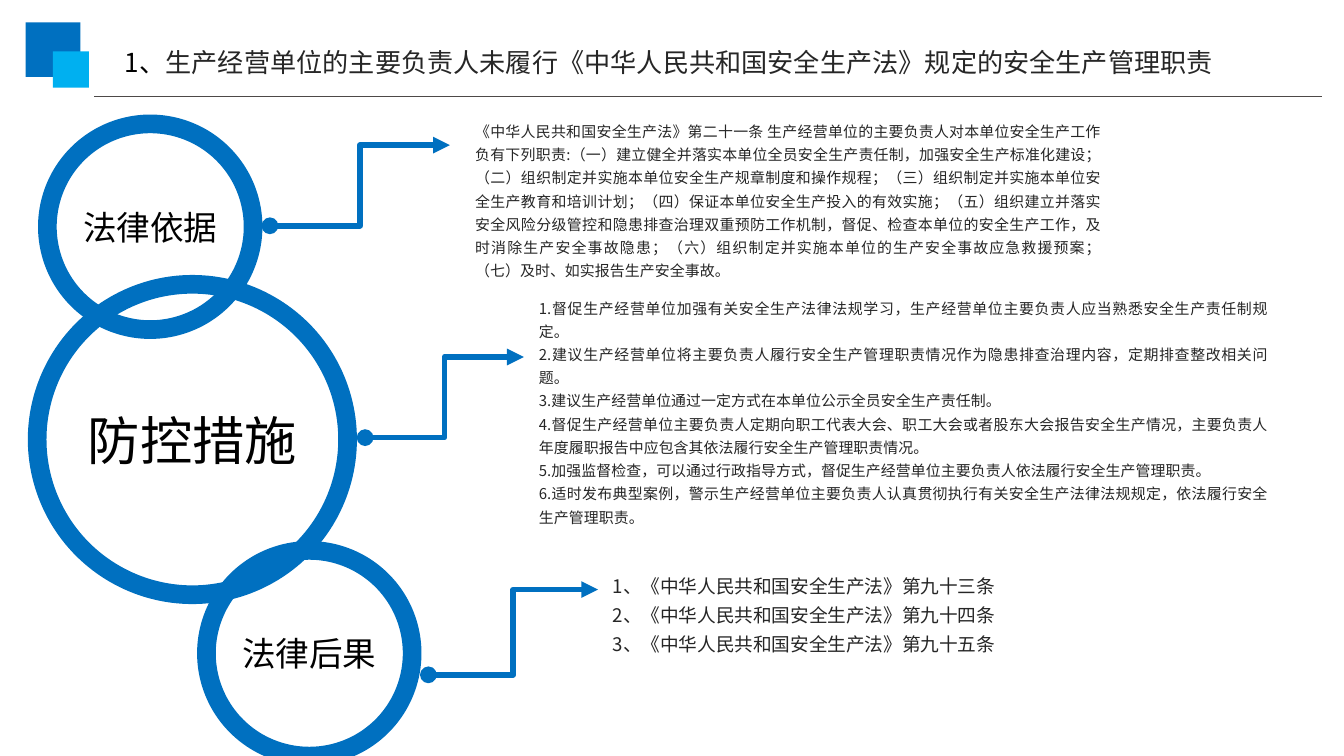
"""Build a slide on the duties of the person in charge of work safety."""
from lxml.etree import SubElement
from pptx import Presentation
from pptx.dml.color import RGBColor
from pptx.enum.shapes import MSO_CONNECTOR, MSO_SHAPE
from pptx.enum.text import MSO_ANCHOR, PP_ALIGN
from pptx.oxml.ns import qn
from pptx.util import Pt

BLUE = RGBColor(0x00, 0x70, 0xC0)
SKY = RGBColor(0x00, 0xB0, 0xF0)
GRAY = RGBColor(0x4D, 0x49, 0x48)
DARK = RGBColor(0x26, 0x26, 0x26)
BLACK = RGBColor(0x00, 0x00, 0x00)
FONT = "Noto Sans CJK SC"

TITLE = "生产经营单位的主要负责人未履行《中华人民共和国安全生产法》规定的安全生产管理职责"
LEGAL_BASIS = [
    "《中华人民共和国安全生产法》第二十一条 生产经营单位的主要负责人对本单位安全生产工作负有下列职责:"
    "（一）建立健全并落实本单位全员安全生产责任制，加强安全生产标准化建设；"
    "（二）组织制定并实施本单位安全生产规章制度和操作规程；"
    "（三）组织制定并实施本单位安全生产教育和培训计划；"
    "（四）保证本单位安全生产投入的有效实施；"
    "（五）组织建立并落实安全风险分级管控和隐患排查治理双重预防工作机制，"
    "督促、检查本单位的安全生产工作，及时消除生产安全事故隐患；"
    "（六）组织制定并实施本单位的生产安全事故应急救援预案；"
    "（七）及时、如实报告生产安全事故。",
]
MEASURES = [
    "1.督促生产经营单位加强有关安全生产法律法规学习，生产经营单位主要负责人应当熟悉安全生产责任制规定。",
    "2.建议生产经营单位将主要负责人履行安全生产管理职责情况作为隐患排查治理内容，定期排查整改相关问题。",
    "3.建议生产经营单位通过一定方式在本单位公示全员安全生产责任制。",
    "4.督促生产经营单位主要负责人定期向职工代表大会、职工大会或者股东大会报告安全生产情况，"
    "主要负责人年度履职报告中应包含其依法履行安全生产管理职责情况。",
    "5.加强监督检查，可以通过行政指导方式，督促生产经营单位主要负责人依法履行安全生产管理职责。",
    "6.适时发布典型案例，警示生产经营单位主要负责人认真贯彻执行有关安全生产法律法规规定，依法履行安全生产管理职责。",
]
CONSEQUENCES = [
    "1、《中华人民共和国安全生产法》第九十三条",
    "2、《中华人民共和国安全生产法》第九十四条",
    "3、《中华人民共和国安全生产法》第九十五条",
]


def add_run(p, text, *, size, color=DARK):
    """Append a run in the slide's Latin and East Asian font."""
    r = p.add_run()
    r.text = text
    r.font.size = Pt(size)
    r.font.name = FONT
    r.font.color.rgb = color
    SubElement(r.font._element, qn("a:ea"), typeface=FONT)


def set_frame(tf, inset_x, inset_y, anchor):
    """Set wrapping, insets and vertical anchor of a text frame."""
    tf.word_wrap = True
    tf.margin_left = tf.margin_right = Pt(inset_x)
    tf.margin_top = tf.margin_bottom = Pt(inset_y)
    tf.vertical_anchor = anchor


def add_square(s, left, top, side, color):
    """Draw a plain filled square."""
    sp = s.shapes.add_shape(MSO_SHAPE.RECTANGLE, Pt(left), Pt(top), Pt(side), Pt(side))
    sp.shadow.inherit = False
    sp.fill.solid()
    sp.fill.fore_color.rgb = color
    sp.line.fill.background()


def add_ring(s, left, top, diameter, label, size):
    """Draw an unfilled ring with a centred label."""
    sp = s.shapes.add_shape(MSO_SHAPE.OVAL, Pt(left), Pt(top), Pt(diameter), Pt(diameter))
    sp.shadow.inherit = False
    sp.fill.background()
    sp.line.color.rgb = BLUE
    sp.line.width = Pt(10)
    set_frame(sp.text_frame, 0, 0, MSO_ANCHOR.MIDDLE)
    p = sp.text_frame.paragraphs[0]
    p.alignment = PP_ALIGN.CENTER
    add_run(p, label, size=size, color=BLACK)


def add_line(s, kind, start, end, color, width):
    """Draw a connector without shadow and return it."""
    cxn = s.shapes.add_connector(kind, *map(Pt, start + end))
    cxn.line.color.rgb = color
    cxn.line.width = Pt(width)
    SubElement(cxn._element.spPr, qn("a:effectLst"))
    return cxn


def add_arrow(s, start, end):
    """Draw an elbow arrow that starts with a dot."""
    cxn = add_line(s, MSO_CONNECTOR.ELBOW, start, end, BLUE, 3)
    ln = cxn.line._get_or_add_ln()
    SubElement(ln, qn("a:headEnd"), type="oval")
    SubElement(ln, qn("a:tailEnd"), type="triangle")


def add_body(s, box, lines, size):
    """Add a justified text box without hanging punctuation, one paragraph per line."""
    tf = s.shapes.add_textbox(*map(Pt, box)).text_frame
    set_frame(tf, 7.9, 4.3, MSO_ANCHOR.MIDDLE)
    for i, text in enumerate(lines):
        p = tf.add_paragraph() if i else tf.paragraphs[0]
        p.alignment = PP_ALIGN.JUSTIFY
        p.line_spacing = 1.3
        p._p.get_or_add_pPr().set("hangingPunct", "0")
        add_run(p, text, size=size)


def add_header(s):
    """Draw the corner squares, the rule and the title."""
    add_square(s, 13.8, 12, 29.3, BLUE)
    add_square(s, 28.3, 27.6, 19.4, SKY)
    add_line(s, MSO_CONNECTOR.STRAIGHT, (708, 51.6), (50.4, 51.6), GRAY, 0.75)
    tf = s.shapes.add_textbox(Pt(59.8), Pt(21.2), Pt(618.5), Pt(41)).text_frame
    set_frame(tf, 7.2, 3.6, MSO_ANCHOR.TOP)
    p = tf.paragraphs[0]
    add_run(p, "1、", size=14, color=BLACK)
    add_run(p, TITLE, size=14)


def main():
    """Build and save the slide."""
    prs = Presentation()
    prs.slide_width, prs.slide_height = Pt(720), Pt(405)
    s = prs.slides.add_slide(prs.slide_layouts[6])
    add_header(s)

    add_ring(s, 110.6, 294.9, 110.2, "法律后果", 18)
    add_body(s, (320.4, 298.8, 254.9, 57.6), CONSEQUENCES, 10)
    add_arrow(s, (229.5, 361.6), (320.4, 315.9))

    add_ring(s, 19.9, 152.3, 166.3, "防控措施", 28)
    add_body(s, (280.8, 166.3, 406.8, 106.6), MEASURES, 8)
    add_arrow(s, (195.6, 234.5), (280.6, 191.3))

    add_ring(s, 25.4, 66.4, 110.2, "法律依据", 18)
    add_body(s, (246.6, 66.4, 351.4, 79.9), LEGAL_BASIS, 8)
    add_arrow(s, (144.6, 121), (241, 77.8))

    prs.save("out.pptx")


if __name__ == "__main__":
    main()
